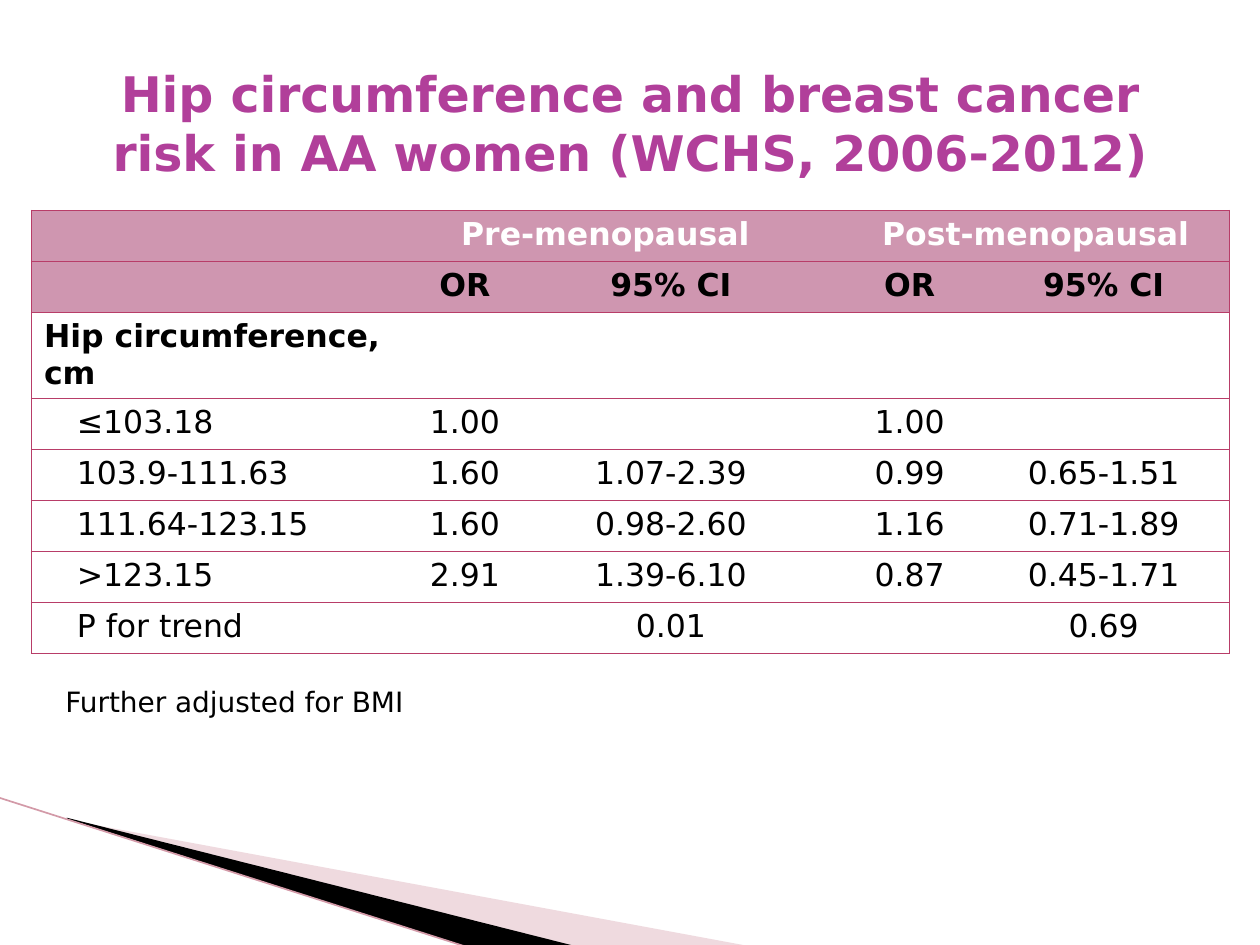
"""Build the hip circumference and breast cancer risk slide."""
from dataclasses import dataclass
from typing import Optional

from lxml.etree import SubElement
from pptx import Presentation
from pptx.dml.color import RGBColor
from pptx.enum.text import MSO_ANCHOR as Anchor, PP_ALIGN as Align
from pptx.oxml.ns import qn
from pptx.util import Inches, Pt

WIDTH, HEIGHT = Inches(10), Inches(7.5)
FONT = "DejaVu Sans"
BLACK = RGBColor(0x00, 0x00, 0x00)
WHITE = RGBColor(0xFF, 0xFF, 0xFF)
PURPLE = RGBColor(0xB1, 0x3F, 0x9A)
HEADER = RGBColor(0xCF, 0x96, 0xB0)
RULE = RGBColor(0xB8, 0x3D, 0x68)
PALE = RGBColor(0xD8, 0xA3, 0xAF)
EDGE = RGBColor(0xD3, 0x9A, 0xA8)

COLUMN_SHARES = (29.2, 10.4, 22.3, 2.3, 10.8, 20)
ROW_SHARE, CATEGORY_ROW_SHARE = 5.4, 9.07
HEADER_ROWS, CATEGORY_ROW = 2, 2
ROWS = (
    ("", "Pre-menopausal", "", "", "Post-menopausal", ""),
    ("", "OR", "95% CI", "", "OR", "95% CI"),
    ("Hip circumference, cm", "", "", "", "", ""),
    ("≤103.18", "1.00", "", "", "1.00", ""),
    ("103.9-111.63", "1.60", "1.07-2.39", "", "0.99", "0.65-1.51"),
    ("111.64-123.15", "1.60", "0.98-2.60", "", "1.16", "0.71-1.89"),
    (">123.15", "2.91", "1.39-6.10", "", "0.87", "0.45-1.71"),
    ("P for trend", "", "0.01", "", "", "0.69"),
)


@dataclass(frozen=True)
class Label:
    """A text box, placed in percent of the slide."""
    text: str
    left: float
    top: float
    width: float
    height: float
    size: int
    color: RGBColor
    bold: bool = False
    align: Align = Align.LEFT
    anchor: Anchor = Anchor.TOP
    wrap: bool = True


@dataclass(frozen=True)
class Wedge:
    """A filled outline, with points in percent of the slide."""
    points: tuple
    color: RGBColor
    opacity: Optional[int] = None


WEDGES = (
    Wedge(((5.5, 86.8), (59.5, 100.13), (45.6, 100.13), (5.5, 86.67)), PALE, 40),
    Wedge(((5.3, 86.53), (45.7, 100.13), (37.2, 100.27), (5.4, 86.67)), BLACK),
)
LABELS = (
    Label("Hip circumference and breast cancer risk in AA women (WCHS, 2006-2012)",
          5, 3.33, 90, 19.33, 28, PURPLE, True, Align.CENTER, Anchor.MIDDLE),
    Label("Further adjusted for BMI", 4.2, 71.73, 29.9, 4.93, 16, BLACK, wrap=False),
)


def across(share: float) -> int:
    """Turn a percentage of the slide width into a length."""
    return round(WIDTH * share / 100)


def down(share: float) -> int:
    """Turn a percentage of the slide height into a length."""
    return round(HEIGHT * share / 100)


def style_font(font, size: int, color: RGBColor, bold: bool) -> None:
    """Set the typeface, size, colour and weight of a font."""
    font.name, font.size, font.bold = FONT, Pt(size), bold
    font.color.rgb = color


def draw_label(slide, label: Label) -> None:
    """Draw one text box."""
    box = slide.shapes.add_textbox(across(label.left), down(label.top),
                                   across(label.width), down(label.height))
    frame = box.text_frame
    frame.word_wrap, frame.vertical_anchor = label.wrap, label.anchor
    paragraph = frame.paragraphs[0]
    paragraph.text, paragraph.alignment = label.text, label.align
    style_font(paragraph.font, label.size, label.color, label.bold)


def draw_wedge(slide, wedge: Wedge) -> None:
    """Draw one filled wedge without an outline."""
    points = [(across(x), down(y)) for x, y in wedge.points]
    builder = slide.shapes.build_freeform(*points[0])
    builder.add_line_segments(points[1:])
    shape = builder.convert_to_shape()
    shape.shadow.inherit = False
    shape.line.fill.background()
    shape.fill.solid()
    shape.fill.fore_color.rgb = wedge.color
    if wedge.opacity is not None:
        color = shape.fill._xPr.find(".//" + qn("a:srgbClr"))
        SubElement(color, qn("a:alpha"), val=str(wedge.opacity * 1000))


def draw_edge_line(slide) -> None:
    """Draw the thin line along the wedges."""
    line = slide.shapes.add_connector(1, across(-0.1), down(84.4),
                                      across(37.2), down(100.27))
    line.line.color.rgb, line.line.width = EDGE, Pt(0.95)
    SubElement(line._element.spPr, qn("a:effectLst"))


def set_borders(cell, left: bool, right: bool) -> None:
    """Rule a cell above and below, and at the sides where asked."""
    properties = cell._tc.get_or_add_tcPr()
    for side, ruled in (("L", left), ("R", right), ("T", True), ("B", True)):
        border = SubElement(properties, qn(f"a:ln{side}"), w=str(Pt(0.75)))
        if ruled:
            fill = SubElement(border, qn("a:solidFill"))
            SubElement(fill, qn("a:srgbClr"), val=str(RULE))
        else:
            SubElement(border, qn("a:noFill"))


def fill_cell(cell, text: str, row: int, column: int) -> None:
    """Write and style one table cell."""
    last = column + (cell.span_width if cell.is_merge_origin else 1)
    set_borders(cell, column == 0, last == len(COLUMN_SHARES))
    if row < HEADER_ROWS:
        cell.fill.solid()
        cell.fill.fore_color.rgb = HEADER
    else:
        cell.fill.background()
    paragraph = cell.text_frame.paragraphs[0]
    paragraph.text = text
    paragraph.alignment = Align.CENTER if column else Align.LEFT
    if column == 0 and row > CATEGORY_ROW:
        properties = paragraph._p.get_or_add_pPr()
        properties.set("marL", str(Inches(0.26)))
        properties.set("indent", "0")
    style_font(paragraph.font, 18, BLACK if row else WHITE, row <= CATEGORY_ROW)


def draw_table(slide) -> None:
    """Draw the table of odds ratios."""
    heights = [CATEGORY_ROW_SHARE if row == CATEGORY_ROW else ROW_SHARE
               for row in range(len(ROWS))]
    table = slide.shapes.add_table(
        len(ROWS), len(COLUMN_SHARES), across(2.5), down(22.27),
        across(sum(COLUMN_SHARES)), down(sum(heights))).table
    table.first_row = table.horz_banding = False
    for column, share in zip(table.columns, COLUMN_SHARES):
        column.width = across(share)
    for row, share in zip(table.rows, heights):
        row.height = down(share)
    for first in (1, 4):
        table.cell(0, first).merge(table.cell(0, first + 1))
    for row, texts in enumerate(ROWS):
        for column, text in enumerate(texts):
            fill_cell(table.cell(row, column), text, row, column)


def main() -> None:
    """Build and save the slide."""
    presentation = Presentation()
    presentation.slide_width, presentation.slide_height = WIDTH, HEIGHT
    slide = presentation.slides.add_slide(presentation.slide_layouts[6])
    for wedge in WEDGES:
        draw_wedge(slide, wedge)
    draw_edge_line(slide)
    draw_table(slide)
    for label in LABELS:
        draw_label(slide, label)
    presentation.save("out.pptx")


if __name__ == "__main__":
    main()
